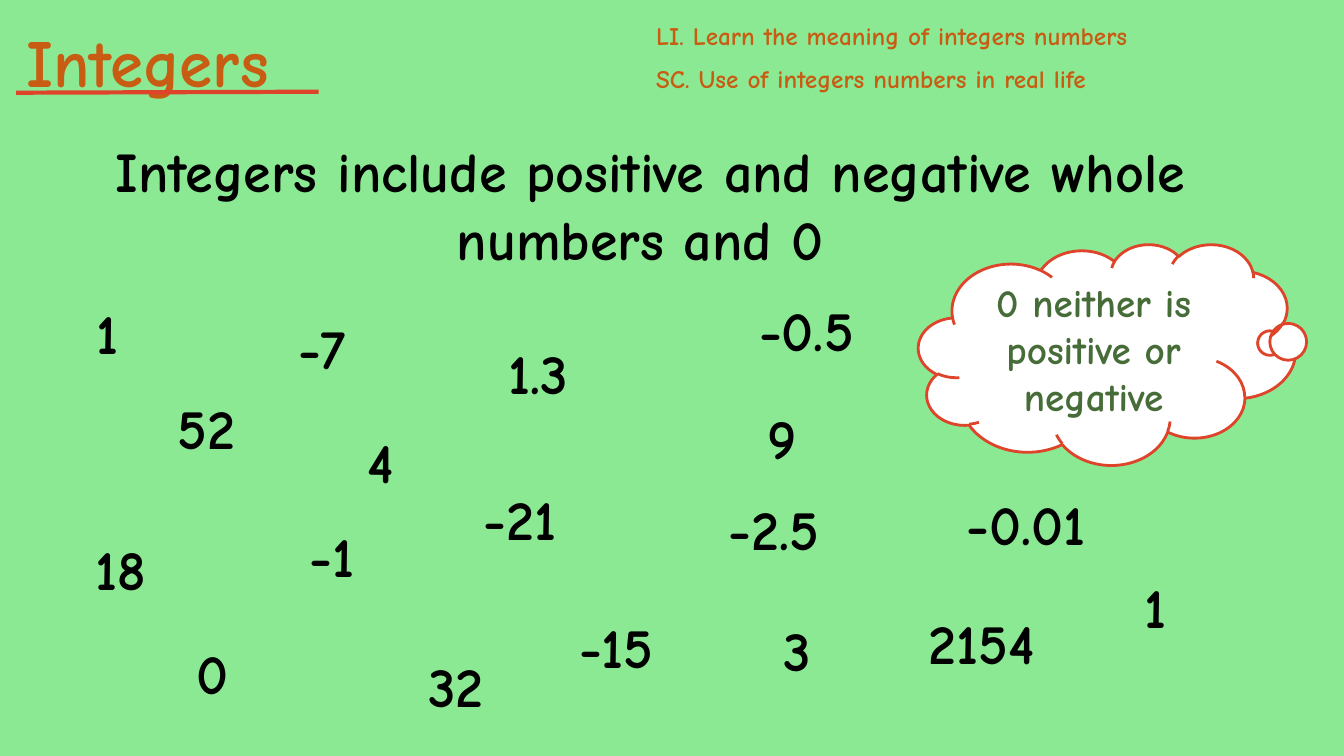
from lxml.etree import SubElement
from pptx import Presentation
from pptx.dml.color import RGBColor
from pptx.enum.shapes import MSO_CONNECTOR, MSO_SHAPE
from pptx.enum.text import MSO_ANCHOR, PP_ALIGN
from pptx.oxml.ns import qn
from pptx.util import Inches, Pt

GREEN, ORANGE, RED = "8BE994", "C85C12", "DE442A"


def rgb(value):
    return RGBColor.from_string(value)


def write(shape, text, size=40, color="000000", align=PP_ALIGN.CENTER,
          anchor=MSO_ANCHOR.TOP, gap=0):
    frame = shape.text_frame
    frame.word_wrap = True
    frame.vertical_anchor = anchor
    for index, line in enumerate(text.split("\n")):
        paragraph = frame.add_paragraph() if index else frame.paragraphs[0]
        paragraph.alignment = align
        paragraph.space_before = Pt(gap if index else 0)
        run = paragraph.add_run()
        run.text = line
        run.font.name = "Comic Neue"
        run.font.size = Pt(size)
        run.font.bold = True
        run.font.color.rgb = rgb(color)


prs = Presentation()
prs.slide_width, prs.slide_height = Inches(13.33), Inches(7.5)
slide = prs.slides.add_slide(prs.slide_layouts[6])
slide.background.fill.solid()
slide.background.fill.fore_color.rgb = rgb(GREEN)
shapes = slide.shapes

# Definition, then the heading and the lesson aims
definition = (0.44, 1.31, 12.02, 1.45,
              "Integers include positive and negative whole numbers and 0 ")

heading = shapes.add_textbox(Inches(0.16), Inches(0.15), Inches(4.07), Inches(0.91))
write(heading, "Integers", size=48, color=ORANGE, align=PP_ALIGN.LEFT)

aims = shapes.add_textbox(Inches(6.41), Inches(0.15), Inches(6.92), Inches(1.31))
write(aims, "LI. Learn the meaning of integers numbers\n"
            "SC. Use of integers numbers in real life",
      size=18, color=ORANGE, align=PP_ALIGN.LEFT, gap=9)

underline = shapes.add_connector(MSO_CONNECTOR.STRAIGHT, Inches(0.16), Inches(0.92),
                                 Inches(3.16), Inches(0.91))
underline.line.color.rgb = rgb(RED)
underline.line.width = Pt(3)
SubElement(underline._element.spPr, qn("a:effectLst"))

# Thought about zero
thought = shapes.add_shape(MSO_SHAPE.CLOUD_CALLOUT, Inches(9.11), Inches(2.42),
                           Inches(3.74), Inches(2.19))
thought.adjustments[0], thought.adjustments[1] = 0.416, -0.049
thought.shadow.inherit = False
thought.fill.solid()
thought.fill.fore_color.rgb = rgb("FFFFFF")
thought.line.color.rgb = rgb(RED)
thought.line.width = Pt(2)
write(thought, "0 neither is positive or negative", size=28, color="466C38",
      anchor=MSO_ANCHOR.MIDDLE)

# Scattered numbers: left, top, width, value
numbers = [
    (0.56, 2.91, 0.81, " 1"), (0.51, 5.25, 1.18, " 18"), (1.6, 6.29, 0.81, " 0"),
    (2.47, 5.12, 1.44, " -1"), (2.42, 3.06, 1.55, "-7"), (6.54, 4.86, 2.07, " -2.5"),
    (4.53, 3.31, 1.43, " 1.3"), (7.4, 6.06, 0.81, " 3"), (7.25, 3.95, 0.81, " 9"),
    (8.58, 5.99, 2.11, " 2154"), (6.97, 2.88, 1.86, " -0.5"), (1.2, 3.86, 1.49, " 52"),
    (3.27, 4.19, 0.81, " 4"), (3.68, 6.41, 1.49, " 32"), (5.23, 6.03, 1.57, " -15"),
    (4.27, 4.76, 1.58, " -21"), (10.96, 5.63, 0.81, " 1"), (8.97, 4.81, 2.21, " -0.01"),
]
cards = [definition] + [(left, top, width, 0.77, value)
                        for left, top, width, value in numbers]
for left, top, width, height, words in cards:
    card = shapes.add_shape(MSO_SHAPE.RECTANGLE, Inches(left), Inches(top),
                            Inches(width), Inches(height))
    card.shadow.inherit = False
    card.fill.solid()
    card.fill.fore_color.rgb = rgb(GREEN)
    card.line.fill.background()
    write(card, words)
    if words == definition[-1]:
        # The definition lies behind the cloud and the aims
        shapes._spTree.insert(2, card._element)

prs.save("out.pptx")
